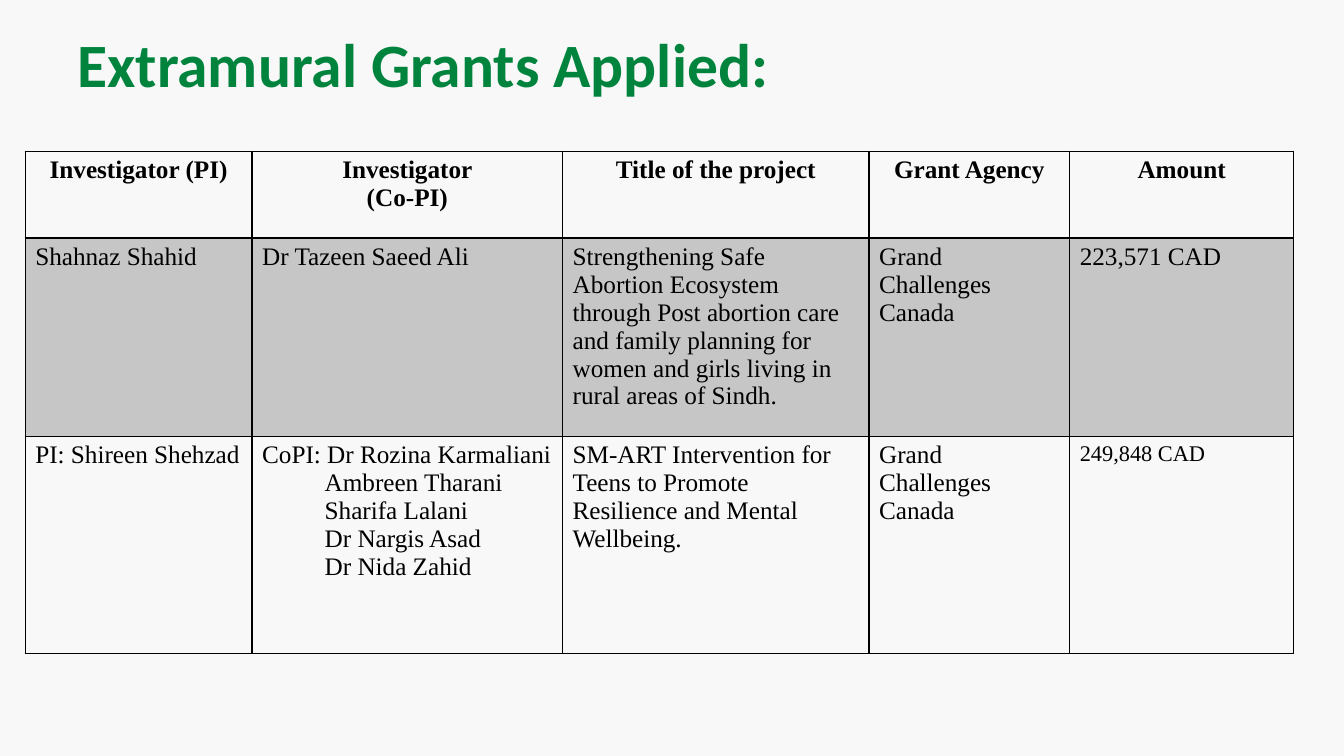
from lxml import etree
from pptx import Presentation
from pptx.dml.color import RGBColor
from pptx.enum import text
from pptx.oxml.ns import qn
from pptx.util import Inches, Pt

# Content: each cell is a list of paragraphs
TITLE = "Extramural Grants Applied:"
AGENCY = ["Grand Challenges Canada"]
ROWS = [
    [["Investigator (PI)"], ["Investigator", "(Co-PI)"], ["Title of the project"],
     ["Grant Agency"], ["Amount"]],
    [["Shahnaz Shahid"], ["Dr Tazeen Saeed Ali"],
     ["Strengthening Safe Abortion Ecosystem through Post abortion care and "
      "family planning for women and girls living in rural areas of Sindh."],
     AGENCY, ["223,571 CAD"]],
    [["PI: Shireen Shehzad"],
     ["CoPI: Dr Rozina Karmaliani", "Ambreen Tharani", "Sharifa Lalani",
      "Dr Nargis Asad", "Dr Nida Zahid"],
     ["SM-ART Intervention for Teens to Promote Resilience and Mental Wellbeing."],
     AGENCY, ["249,848 CAD"]],
]
WIDTHS = [2.25, 3.08, 3.04, 1.99, 2.22]
HEIGHTS = [0.86, 1.97, 2.15]
SMALL = (2, 4)  # the one cell in smaller type
INDENT = 0.62   # co-investigators below the first
COLORS = {"back": "F8F8F8", "title": "00843D", "ink": "000000"}


def color(name):
    return RGBColor.from_string(COLORS[name])


def style(para, face, size, tone, bold):
    font = para.font
    font.name, font.size, font.bold = face, Pt(size), bold
    font.color.rgb = color(tone)
    for run in para.runs:
        run.font.name, run.font.size, run.font.bold = face, Pt(size), bold
        run.font.color.rgb = color(tone)


def border(cell, side, width):
    line = etree.SubElement(cell._tc.get_or_add_tcPr(), qn("a:ln" + side),
                            w=str(Pt(width)))
    fill = etree.SubElement(line, qn("a:solidFill"))
    etree.SubElement(fill, qn("a:srgbClr"), val=COLORS["ink"])


def shade(cell, alpha):
    cell.fill.solid()
    cell.fill.fore_color.rgb = color("ink")
    tint = cell._tc.tcPr.find(".//" + qn("a:solidFill") + "[last()]/..")
    tint = cell._tc.tcPr.find(qn("a:solidFill")).find(qn("a:srgbClr"))
    etree.SubElement(tint, qn("a:alpha"), val=str(alpha * 1000))


def fill_cell(cell, lines, row, col):
    cell.text_frame.text = "\n".join(lines)
    for i, para in enumerate(cell.text_frame.paragraphs):
        if row == 0:
            para.alignment = text.PP_ALIGN.CENTER
        elif i:
            para._p.get_or_add_pPr().set("marL", str(Inches(INDENT)))
        size = 16 if (row, col) == SMALL else 18
        style(para, "Times New Roman", size, "ink", row == 0)
    # Borders: a heavier rule under the header
    heavy = {(0, "B"), (1, "T")}
    for side in "LRTB":
        border(cell, side, 2 if (row, side) in heavy else 1)
    if row == 1:
        shade(cell, 20)
    else:
        cell.fill.background()


def main():
    deck = Presentation()
    deck.slide_width, deck.slide_height = Inches(13.33), Inches(7.5)
    slide = deck.slides.add_slide(deck.slide_layouts[6])
    slide.background.fill.solid()
    slide.background.fill.fore_color.rgb = color("back")

    # Title
    box = slide.shapes.add_textbox(Inches(0.67), Inches(0.08), Inches(12), Inches(1.08))
    frame = box.text_frame
    frame.word_wrap = True
    frame.vertical_anchor = text.MSO_ANCHOR.MIDDLE
    frame.text = TITLE
    style(frame.paragraphs[0], "Calibri", 44, "title", True)

    # Grants table
    grid = slide.shapes.add_table(len(ROWS), len(WIDTHS), Inches(0.25), Inches(1.5),
                                  Inches(sum(WIDTHS)), Inches(sum(HEIGHTS))).table
    grid.first_row = grid.horz_banding = False
    for column, width in zip(grid.columns, WIDTHS):
        column.width = Inches(width)
    for row, height in enumerate(HEIGHTS):
        grid.rows[row].height = Inches(height)
        for col, lines in enumerate(ROWS[row]):
            fill_cell(grid.cell(row, col), lines, row, col)

    deck.save("out.pptx")


if __name__ == "__main__":
    main()
